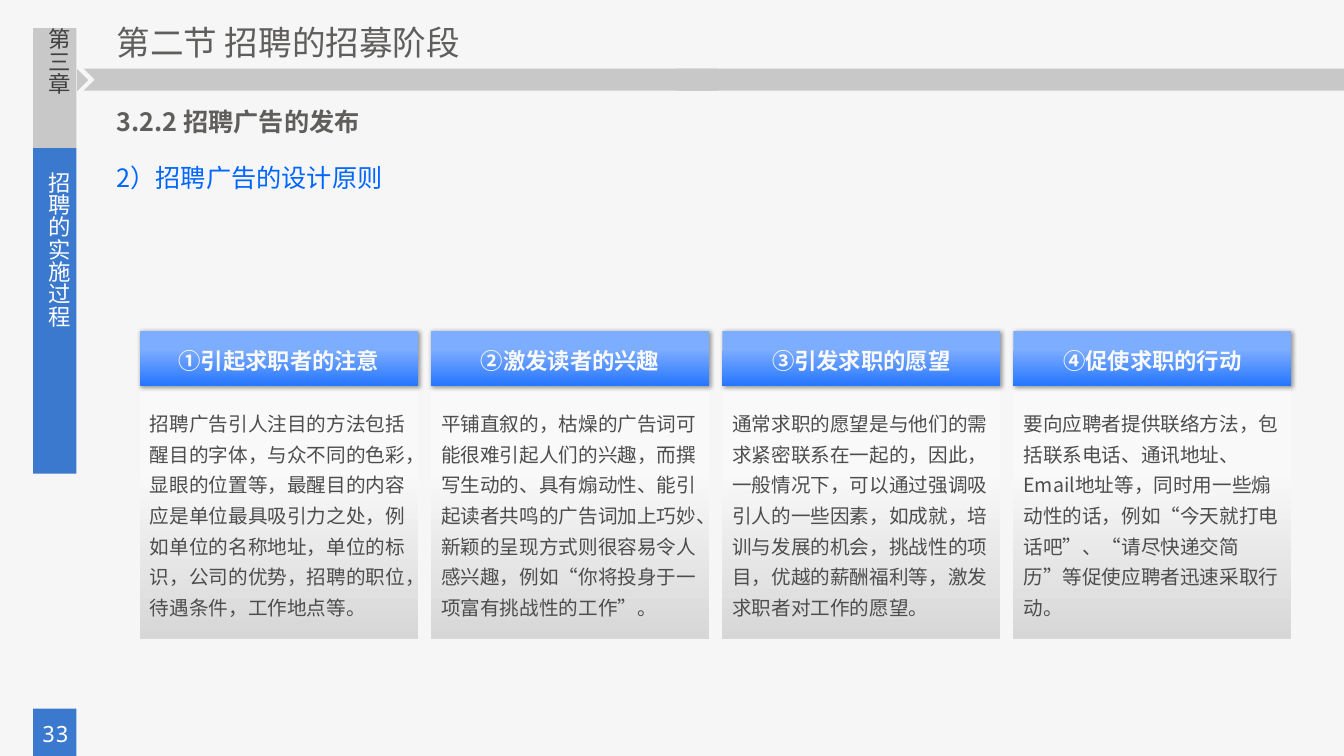
from pptx import Presentation
from pptx.dml.color import RGBColor
from pptx.enum.shapes import MSO_SHAPE as Preset
from pptx.enum.text import MSO_ANCHOR as Anchor, MSO_AUTO_SIZE as AutoSize, PP_ALIGN as Align
from pptx.oxml import parse_xml
from pptx.oxml.ns import nsdecls, qn
from pptx.util import Inches, Pt

GREY, BLUE, WHITE, INK = "C8C8C8", "3B79CE", "FFFFFF", "5F5E5C"
SANS, MONO = "Noto Sans CJK SC", "Noto Sans Mono"


def rgb(color):
    return RGBColor.from_string(color)


class SlideBuilder:
    def __init__(self, slide):
        self.slide = slide
        slide.background.fill.solid()
        slide.background.fill.fore_color.rgb = rgb("F6F6F6")

    def set_text(self, frame, text, size, color, bold=False, align=Align.LEFT, spacing=None, font=SANS):
        frame.word_wrap = True
        frame.text = text
        paragraph = frame.paragraphs[0]
        paragraph.alignment = align
        if spacing:
            paragraph.line_spacing = spacing
        for run in paragraph.runs:
            run.font.size = Pt(size)
            run.font.bold = bold
            run.font.name = font
            run.font.color.rgb = rgb(color)
            east_asian = run.font._element.makeelement(qn("a:ea"), {"typeface": font})
            run.font._element.find(qn("a:latin")).addnext(east_asian)

    def shape(self, box, fill=None, preset=Preset.RECTANGLE, rotation=0, parent=None):
        shape = (parent or self.slide).shapes.add_shape(preset, *map(Inches, box))
        shape.shadow.inherit = False
        shape.line.fill.background()
        shape.rotation = rotation
        if fill:
            shape.fill.solid()
            shape.fill.fore_color.rgb = rgb(fill)
        return shape

    def gradient_panel(self, box, colors, text, parent, **style):
        panel = self.shape(box, parent=parent)
        panel.fill.gradient()
        panel.fill.gradient_angle = 270
        for stop, position, color in zip(panel.fill.gradient_stops, (0.33, 1), colors):
            stop.position = position
            stop.color.rgb = rgb(color)
        panel.text_frame.vertical_anchor = Anchor.MIDDLE
        self.set_text(panel.text_frame, text, **style)
        return panel

    def drop_shadow(self, shape):
        effects = shape._element.spPr.find(qn("a:effectLst"))
        effects.append(parse_xml(
            f'<a:outerShdw {nsdecls("a")} blurRad="{Pt(3)}" dist="{Pt(1)}" dir="2700000" '
            'algn="tl" rotWithShape="0"><a:srgbClr val="000000"><a:alpha val="40000"/>'
            '</a:srgbClr></a:outerShdw>'))

    def text(self, box, text, vertical=False, **style):
        frame = self.slide.shapes.add_textbox(*map(Inches, box)).text_frame
        self.set_text(frame, text, **style)
        frame.auto_size = AutoSize.SHAPE_TO_FIT_TEXT
        if vertical:
            frame.vertical_anchor = Anchor.MIDDLE
            frame.margin_left = frame.margin_right = frame.margin_top = frame.margin_bottom = 0
            frame._txBody.bodyPr.set("vert", "eaVert")

    def principle_card(self, left, heading, body):
        card = self.slide.shapes.add_group_shape()
        self.gradient_panel((left, 3.82, 2.76, 2.52), ("F9F9F9", "D7D7D7"), body, card,
                            size=14, color="4D4D4D", spacing=1.3)
        header = self.gradient_panel((left, 3.28, 2.76, 0.55), ("7DADFF", "2676FF"), heading, card,
                                     size=16, color="F9F9F9", bold=True, align=Align.CENTER, spacing=1.2)
        self.drop_shadow(header)


PRINCIPLES = [
    ("①引起求职者的注意",
     "招聘广告引人注目的方法包括醒目的字体，与众不同的色彩，显眼的位置等，最醒目的内容应是单位最具吸引力之处，"
     "例如单位的名称地址，单位的标识，公司的优势，招聘的职位，待遇条件，工作地点等。"),
    ("②激发读者的兴趣",
     "平铺直叙的，枯燥的广告词可能很难引起人们的兴趣，而撰写生动的、具有煽动性、能引起读者共鸣的广告词加上巧妙、"
     "新颖的呈现方式则很容易令人感兴趣，例如“你将投身于一项富有挑战性的工作”。"),
    ("③引发求职的愿望",
     "通常求职的愿望是与他们的需求紧密联系在一起的，因此，一般情况下，可以通过强调吸引人的一些因素，如成就，"
     "培训与发展的机会，挑战性的项目，优越的薪酬福利等，激发求职者对工作的愿望。"),
    ("④促使求职的行动",
     "要向应聘者提供联络方法，包括联系电话、通讯地址、Email地址等，同时用一些煽动性的话，"
     "例如“今天就打电话吧”、“请尽快递交简历”等促使应聘者迅速采取行动。"),
]


def main():
    deck = Presentation()
    deck.slide_width, deck.slide_height = Inches(13.34), Inches(7.5)
    page = SlideBuilder(deck.slides.add_slide(deck.slide_layouts[6]))

    page.shape((0.83, 0.68, 6.4, 0.22), GREY, Preset.CHEVRON)
    page.shape((0.33, 0.28, 0.43, 1.19), GREY)
    page.shape((0.71, 0.74, 0.22, 0.11), GREY, Preset.ISOSCELES_TRIANGLE, rotation=90)
    page.shape((0.33, 1.47, 0.43, 3.23), BLUE)
    page.shape((6.71, 0.68, 6.63, 0.22), GREY)
    page.shape((0.33, 7.03, 0.43, 0.47), BLUE)

    page.text((0.28, 7.1, 0.54, 0.37), "33", size=16, color=WHITE, align=Align.CENTER, font=MONO)
    page.text((0.45, 0.28, 0.27, 1.19), "第三章", vertical=True, size=16, color="404040", align=Align.CENTER)
    page.text((0.45, 1.7, 0.27, 2.76), "招聘的实施过程", vertical=True, size=16, color=WHITE)
    page.text((1.06, 0.17, 5.44, 0.5), "第二节 招聘的招募阶段", size=24, color=INK)
    page.text((1.06, 0.92, 5.77, 0.46), "3.2.2 招聘广告的发布", size=18, color=INK, bold=True, spacing=1.3)
    page.text((1.06, 1.47, 11.86, 0.49), "2）招聘广告的设计原则", size=18, color="0066FF", spacing=1.3)

    for column, (heading, body) in enumerate(PRINCIPLES):
        page.principle_card(1.39 + 2.89 * column, heading, body)

    deck.save("out.pptx")


if __name__ == "__main__":
    main()
